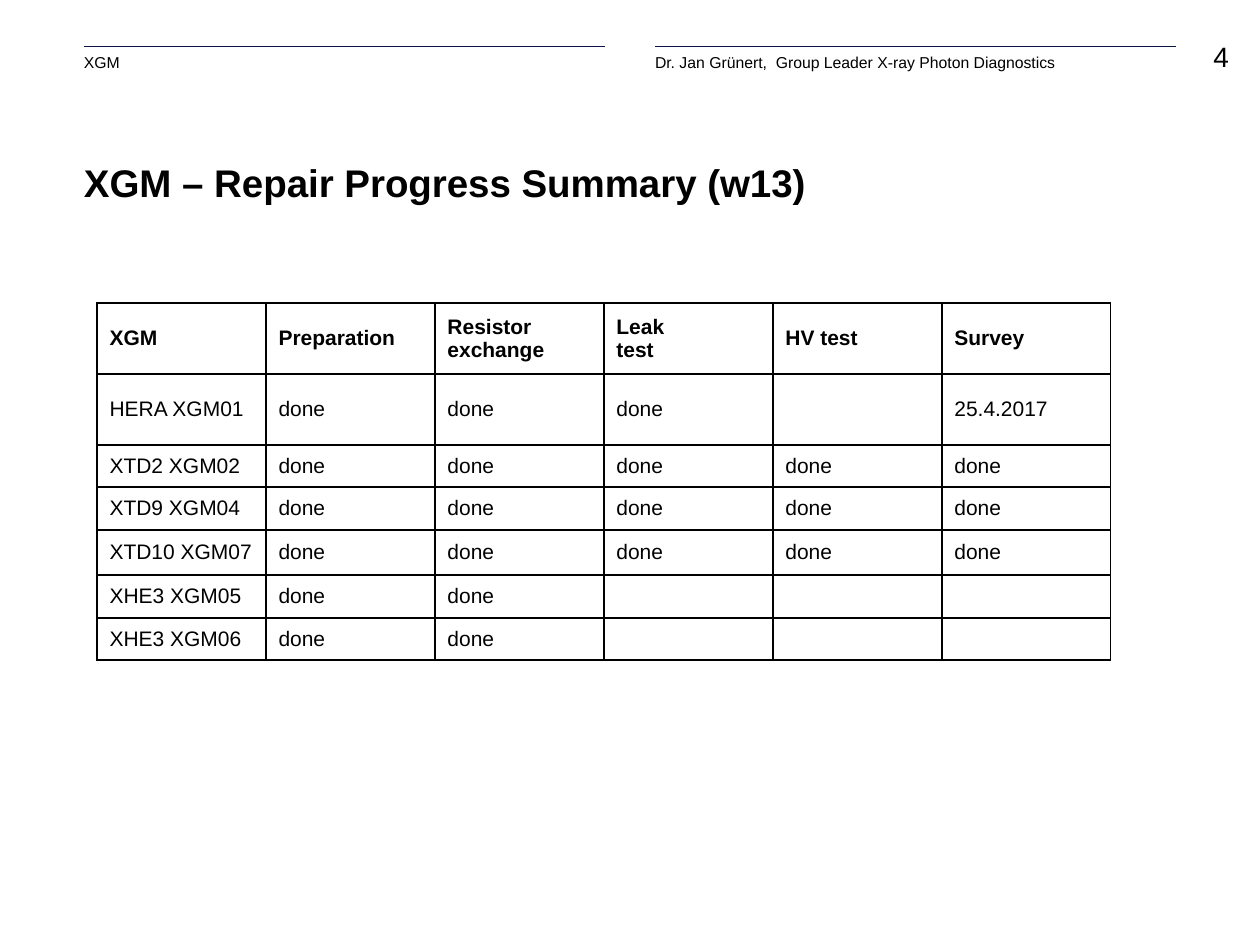
from dataclasses import dataclass

from lxml import etree
from pptx import Presentation, util as u
from pptx.dml.color import RGBColor
from pptx.enum import shapes, text
from pptx.oxml.ns import qn

PX_PER_INCH = 126
BLACK, NAVY = "000000", "0D1546"
FONT = "Arial"


@dataclass
class Box:
    left: int
    top: int
    width: int
    height: int


@dataclass
class HeaderField:
    box: Box
    words: str
    size: int = 9
    align: text.PP_ALIGN = text.PP_ALIGN.LEFT


def px(length: int) -> u.Emu:
    return u.Emu(round(length * 914400 / PX_PER_INCH))


def place(box: Box) -> tuple:
    return px(box.left), px(box.top), px(box.width), px(box.height)


def color(value: str) -> RGBColor:
    return RGBColor.from_string(value)


def add_run(paragraph, words: str, size: int, bold: bool = False) -> None:
    run = paragraph.add_run()
    run.text = words
    run.font.name = FONT
    run.font.size = u.Pt(size)
    run.font.bold = bold
    run.font.color.rgb = color(BLACK)


def clear_margins(frame) -> None:
    frame.margin_left = frame.margin_top = 0
    frame.margin_right = frame.margin_bottom = 0
    frame.word_wrap = True


def add_header_field(slide, field: HeaderField) -> None:
    frame = slide.shapes.add_textbox(*place(field.box)).text_frame
    clear_margins(frame)
    paragraph = frame.paragraphs[0]
    paragraph.alignment = field.align
    add_run(paragraph, field.words, field.size)


def add_rule(slide, left: int, right: int, top: int) -> None:
    rule = slide.shapes.add_connector(
        shapes.MSO_CONNECTOR.STRAIGHT, px(left), px(top), px(right), px(top))
    rule.line.color.rgb = color(NAVY)
    rule.line.width = u.Pt(0.5)
    etree.SubElement(rule._element.spPr, qn("a:effectLst"))


def set_title(slide, box: Box, words: str) -> None:
    title = slide.shapes.title
    title.left, title.top, title.width, title.height = place(box)
    frame = title.text_frame
    clear_margins(frame)
    frame.auto_size = text.MSO_AUTO_SIZE.NONE
    frame.vertical_anchor = text.MSO_ANCHOR.BOTTOM
    paragraph = frame.paragraphs[0]
    paragraph.alignment = text.PP_ALIGN.LEFT
    add_run(paragraph, words, 22, bold=True)


def add_borders(cell) -> None:
    properties = cell._tc.get_or_add_tcPr()
    for side in ("a:lnL", "a:lnR", "a:lnT", "a:lnB"):
        line = etree.SubElement(properties, qn(side), w=str(u.Pt(1)))
        fill = etree.SubElement(line, qn("a:solidFill"))
        etree.SubElement(fill, qn("a:srgbClr"), val=BLACK)


def fill_cell(cell, words: str, bold: bool) -> None:
    add_borders(cell)
    cell.fill.background()
    cell.vertical_anchor = text.MSO_ANCHOR.MIDDLE
    paragraph = cell.text_frame.paragraphs[0]
    if not words:
        # Keep empty cells from stretching their row
        etree.SubElement(paragraph._p, qn("a:endParaRPr"), sz="1200")
        return
    for index, line in enumerate(words.split("\n")):
        if index:
            paragraph.add_line_break()
        add_run(paragraph, line, 12, bold)


def add_progress_table(slide, left: int, top: int, column_width: int,
                       row_heights: list[int], rows: list[list[str]]) -> None:
    columns = len(rows[0])
    box = Box(left, top, column_width * columns, sum(row_heights))
    table = slide.shapes.add_table(len(rows), columns, *place(box)).table
    table.first_row = table.horz_banding = False
    for column in table.columns:
        column.width = px(column_width)
    for row_index, (height, row) in enumerate(zip(row_heights, rows)):
        table.rows[row_index].height = px(height)
        for column_index, words in enumerate(row):
            fill_cell(table.cell(row_index, column_index), words, row_index == 0)


HEADER_FIELDS = [
    HeaderField(Box(1176, 40, 53, 40), "4", 16, text.PP_ALIGN.RIGHT),
    HeaderField(Box(84, 53, 521, 30), "XGM"),
    HeaderField(Box(655, 53, 521, 30),
                "Dr. Jan Grünert,  Group Leader X-ray Photon Diagnostics"),
]

STEPS = ["XGM", "Preparation", "Resistor exchange", "Leak \ntest", "HV test", "Survey"]
PROGRESS = [
    STEPS,
    ["HERA XGM01"] + ["done"] * 3 + ["", "25.4.2017"],
    *[[device] + ["done"] * 5 for device in ("XTD2 XGM02", "XTD9 XGM04", "XTD10 XGM07")],
    *[[device] + ["done"] * 2 + [""] * 3 for device in ("XHE3 XGM05", "XHE3 XGM06")],
]
ROW_HEIGHTS = [71, 71, 42, 43, 45, 43, 42]


def main() -> None:
    presentation = Presentation()
    presentation.slide_width, presentation.slide_height = px(1260), px(945)
    slide = presentation.slides.add_slide(presentation.slide_layouts[5])

    # Page header
    for left in (84, 655):
        add_rule(slide, left, left + 521, 46)
    for field in HEADER_FIELDS:
        add_header_field(slide, field)

    # Title and repair progress
    set_title(slide, Box(84, 98, 1092, 107), "XGM – Repair Progress Summary (w13)")
    add_progress_table(slide, 97, 303, 169, ROW_HEIGHTS, PROGRESS)

    presentation.save("out.pptx")


if __name__ == "__main__":
    main()
